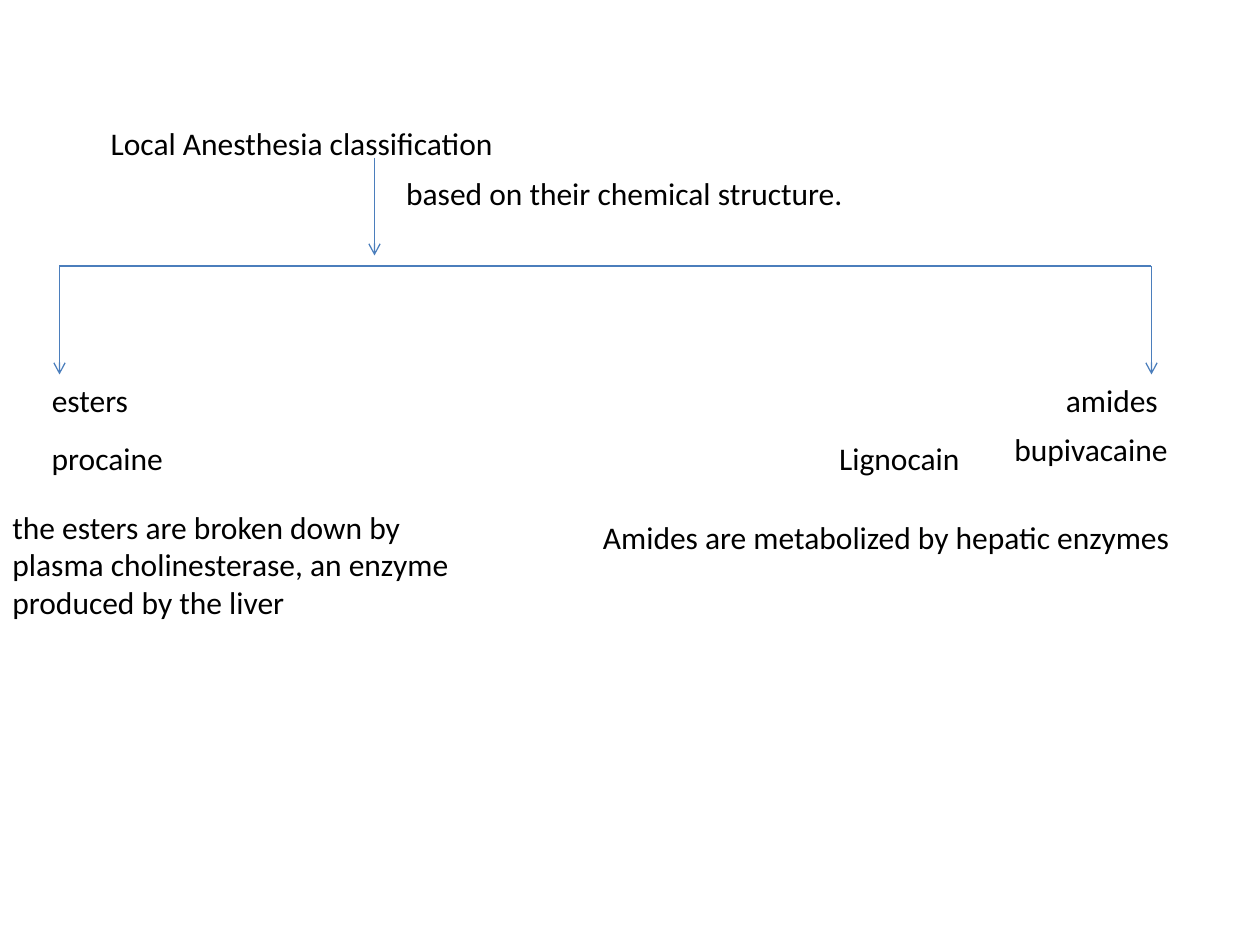
"""Build the local anesthesia classification slide."""
from typing import NamedTuple

from lxml import etree
from pptx import Presentation
from pptx.dml.color import RGBColor
from pptx.enum import shapes, text
from pptx.oxml import ns
from pptx.util import Pt

BLACK = RGBColor(0, 0, 0)
BLUE = RGBColor(0x4B, 0x7E, 0xBC)
WHITE = RGBColor(255, 255, 255)
FONT = "Calibri"
SIZE = 18
HIGH = 29

LEFT, RIGHT = 34, 658
STEM = 214
BAR, TIP = 152, 214


class Label(NamedTuple):
    words: str
    x: float
    y: float
    wide: float
    high: float = HIGH


class Line(NamedTuple):
    x1: float
    y1: float
    x2: float
    y2: float
    arrow: bool = True


TITLE = Label("Local Anesthesia classification", 56, 67.5, 456)
LABELS = [
    Label("based on their chemical structure.", 225, 95.75, 360),
    Label("esters", 22.5, TIP, 60),
    Label("amides", 602, TIP, 70.5),
    Label("procaine", 22.5, 247.5, 83),
    Label("Lignocain", 472.5, 247.5, 92),
    Label("bupivacaine", 572.5, 242, 109),
    Label("Amides are metabolized by hepatic enzymes", 337.5, 292.5, 360),
    Label("the esters are broken down by plasma cholinesterase, "
          "an enzyme produced by the liver", 0, 286.5, 264, 73),
]
LINES = [
    Line(STEM, 90, STEM, 146),
    Line(RIGHT, BAR, LEFT, BAR, False),
    Line(LEFT, BAR, LEFT, TIP),
    Line(RIGHT, BAR, RIGHT, TIP),
]


def write(shape, label: Label) -> None:
    shape.left, shape.top = Pt(label.x), Pt(label.y)
    shape.width, shape.height = Pt(label.wide), Pt(label.high)
    frame = shape.text_frame
    frame.word_wrap = True
    frame.auto_size = text.MSO_AUTO_SIZE.SHAPE_TO_FIT_TEXT
    frame.vertical_anchor = text.MSO_ANCHOR.TOP
    para = frame.paragraphs[0]
    para.alignment = text.PP_ALIGN.LEFT
    run = para.add_run()
    run.text = label.words
    run.font.name = FONT
    run.font.size = Pt(SIZE)
    run.font.color.rgb = BLACK


def draw(slide, line: Line) -> None:
    link = slide.shapes.add_connector(
        shapes.MSO_CONNECTOR.STRAIGHT,
        Pt(line.x1), Pt(line.y1), Pt(line.x2), Pt(line.y2))
    link.line.color.rgb = BLUE
    link.line.width = Pt(0.75)
    if line.arrow:
        stroke = link.line._get_or_add_ln()
        etree.SubElement(stroke, ns.qn("a:tailEnd"), type="arrow")
    etree.SubElement(link._element.spPr, ns.qn("a:effectLst"))


def main() -> None:
    deck = Presentation()
    deck.slide_width, deck.slide_height = Pt(720), Pt(540)
    slide = deck.slides.add_slide(deck.slide_layouts[5])
    slide.background.fill.solid()
    slide.background.fill.fore_color.rgb = WHITE
    write(slide.shapes.title, TITLE)
    for line in LINES:
        draw(slide, line)
    for label in LABELS:
        write(slide.shapes.add_textbox(0, 0, 0, 0), label)
    deck.save("out.pptx")


if __name__ == "__main__":
    main()
